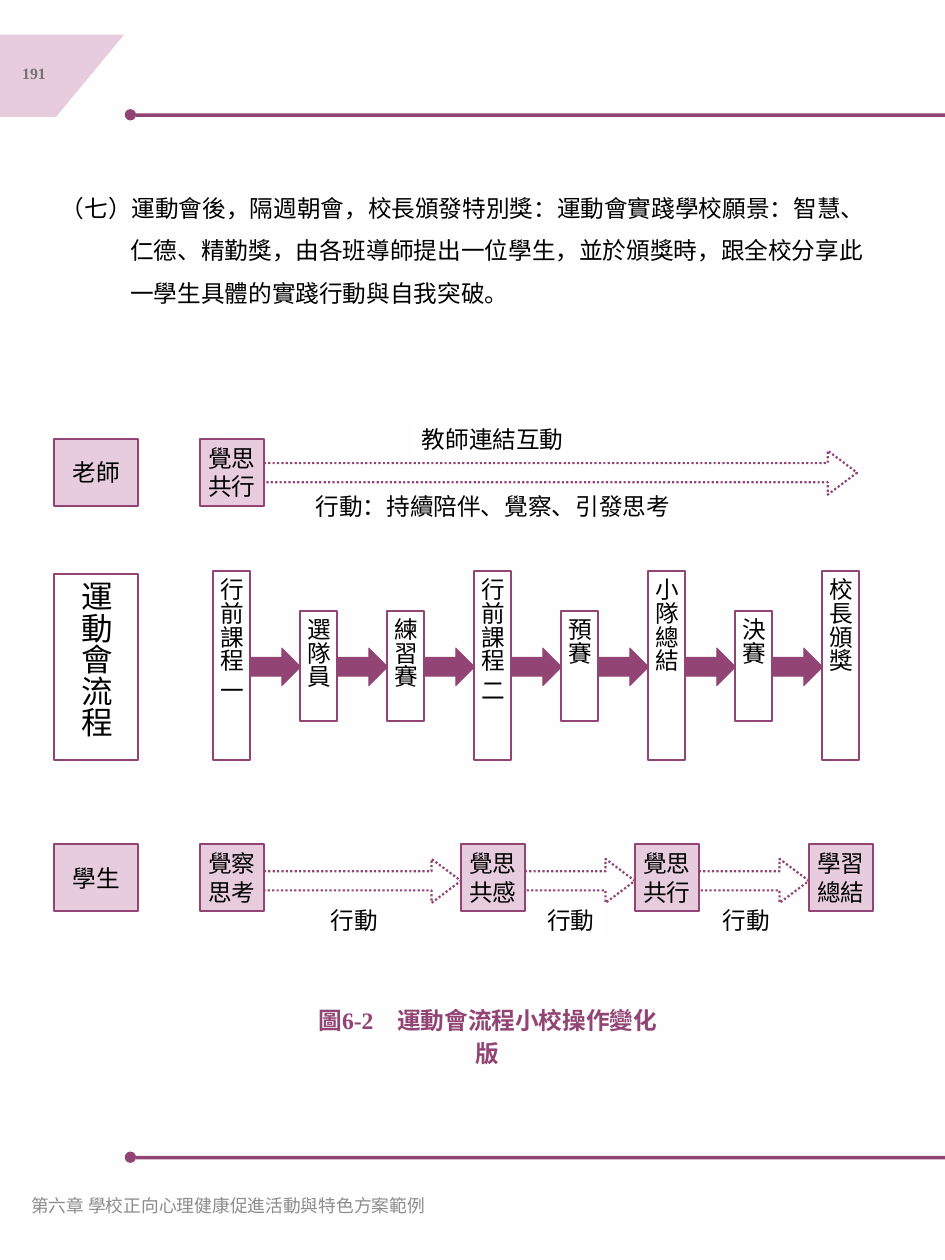
from pptx import Presentation
from pptx.dml.color import RGBColor
from pptx.enum.dml import MSO_LINE
from pptx.enum.shapes import MSO_SHAPE
from pptx.enum.text import MSO_ANCHOR, PP_ALIGN
from pptx.util import Inches, Pt

PLUM = RGBColor(0x92, 0x44, 0x74)
PINK = RGBColor(0xE7, 0xCC, 0xDD)
WHITE = RGBColor(0xFF, 0xFF, 0xFF)
PAPER = RGBColor(0xFE, 0xFE, 0xFE)
BLACK = RGBColor(0, 0, 0)
GREY = RGBColor(0x76, 0x71, 0x71)
LIGHT_GREY = RGBColor(0x8C, 0x8C, 0x8C)

SERIF = "Times New Roman"
SANS = "Noto Sans CJK SC"

RECTANGLE, OVAL, ARROW = MSO_SHAPE.RECTANGLE, MSO_SHAPE.OVAL, MSO_SHAPE.RIGHT_ARROW
TOP, MIDDLE = MSO_ANCHOR.TOP, MSO_ANCHOR.MIDDLE
LEFT, CENTER = PP_ALIGN.LEFT, PP_ALIGN.CENTER
DOTTED = MSO_LINE.ROUND_DOT

PAGE_WIDTH, PAGE_HEIGHT = 13.33, 17.78
STEPS = ["行前課程 一", "選隊員", "練習賽", "行前課程 二",
         "預賽", "小隊總結", "決賽", "校長頒獎"]
STAGES = {0: "覺察\n思考", 3: "覺思\n共感", 5: "覺思\n共行", 7: "學習\n總結"}
FIRST_CENTER, LAST_CENTER = 3.27, 11.86
STEP_GAP = (LAST_CENTER - FIRST_CENTER) / (len(STEPS) - 1)
STAGE_WIDTH = 0.9


def step_center(index):
    return FIRST_CENTER + index * STEP_GAP


def write(shape, text, size=24, font=SERIF, color=BLACK, bold=False,
          align=CENTER, anchor=MIDDLE, wrap=True, spacing=None):
    """Fill a shape with text, one paragraph for each line."""
    frame = shape.text_frame
    frame.word_wrap = wrap
    frame.vertical_anchor = anchor
    frame.text = text
    for para in frame.paragraphs:
        para.alignment = align
        para.line_spacing = spacing
        para.font.size = Pt(size)
        para.font.name = font
        para.font.bold = bold
        para.font.color.rgb = color
    return frame


def add_block(page, kind, box, fill, line=None, width=2.25):
    shape = page.shapes.add_shape(kind, *map(Inches, box))
    shape.shadow.inherit = False
    shape.fill.solid()
    shape.fill.fore_color.rgb = fill
    if line is None:
        shape.line.fill.background()
    else:
        shape.line.color.rgb = line
        shape.line.width = Pt(width)
    return shape


def add_text(page, box, text, **style):
    return write(page.shapes.add_textbox(*map(Inches, box)), text, **style)


def add_dotted_arrow(page, box):
    arrow = add_block(page, ARROW, box, WHITE, PLUM)
    arrow.adjustments[0], arrow.adjustments[1] = 0.433, 0.667
    arrow.line.dash_style = DOTTED


def add_vertical_box(page, box, text, size=24):
    frame = write(add_block(page, RECTANGLE, box, WHITE, PLUM), text, size)
    frame._txBody.bodyPr.set("vert", "eaVert")


def add_label(page, center, top, width, text):
    box = (center - width / 2, top, width, 0.5)
    write(add_block(page, RECTANGLE, box, WHITE), text,
          font=SANS, anchor=TOP, wrap=False)


def add_rule(page, left, middle):
    """Dot followed by a bar that runs to the right edge."""
    dot = 0.16
    bar_left = left + dot
    add_block(page, RECTANGLE,
              (bar_left, middle - 0.02, PAGE_WIDTH - bar_left, 0.05), PLUM)
    add_block(page, OVAL, (left, middle - dot / 2, dot, dot), PLUM)


def add_page_tab(page, box):
    left, top, width, height = box
    outline = page.shapes.build_freeform(Inches(left), Inches(top))
    outline.add_line_segments([
        (Inches(left + width), Inches(top)),
        (Inches(left + 0.79), Inches(top + height)),
        (Inches(left), Inches(top + height))], close=True)
    tab = outline.convert_to_shape()
    tab.shadow.inherit = False
    tab.fill.solid()
    tab.fill.fore_color.rgb = PINK
    tab.line.fill.background()
    add_text(page, (left + 0.09, top + 0.15, 0.78, 0.8), "191",
             size=16, color=GREY, bold=True)


def add_intro(page, box):
    frame = add_text(
        page, box,
        "（七）運動會後，隔週朝會，校長頒發特別獎：運動會實踐學校願景：智慧、"
        "仁德、精勤獎，由各班導師提出一位學生，並於頒獎時，跟全校分享此"
        "一學生具體的實踐行動與自我突破。",
        align=LEFT, anchor=TOP, spacing=1.5)
    properties = frame.paragraphs[0]._p.get_or_add_pPr()
    properties.set("marL", str(Inches(0.98)))
    properties.set("indent", str(-Inches(0.98)))


def add_pink_box(page, box, text):
    write(add_block(page, RECTANGLE, box, PINK, PLUM), text)


def add_teacher_row(page, box):
    left, top, width, height = box
    stage_left = FIRST_CENTER - STAGE_WIDTH / 2
    arrow_left = stage_left + STAGE_WIDTH
    add_dotted_arrow(page, (arrow_left, top + 0.17, left + width - arrow_left, 0.62))
    add_pink_box(page, (left, top, 1.19, height), "老師")
    add_pink_box(page, (stage_left, top, STAGE_WIDTH, height), "覺思共行")
    add_label(page, 6.95, top - 0.25, 2.22, "教師連結互動")
    add_label(page, 6.95, top + 0.7, 5.25, "行動：持續陪伴、覺察、引發思考")


def add_process_row(page, box):
    left, top, _, height = box
    step_width, middle = 0.52, top + height / 2
    add_vertical_box(page, (left, top + 0.04, 1.19, height - 0.04), "運動會流程", 32)
    for index, step in enumerate(STEPS):
        step_height = height if len(step) > 3 else 1.55
        step_left = step_center(index) - step_width / 2
        add_vertical_box(page, (step_left, middle - step_height / 2,
                                step_width, step_height), step)
    for index in range(len(STEPS) - 1):
        arrow_left = step_center(index) + step_width / 2
        add_block(page, ARROW, (arrow_left, middle - 0.25, 0.71, 0.53), PLUM, PLUM, 1)


def add_student_row(page, box):
    left, top, _, height = box
    centers = [step_center(index) for index in STAGES]
    for start, end in zip(centers, centers[1:]):
        add_dotted_arrow(page, (start + STAGE_WIDTH / 2, top + 0.21,
                                end - start - STAGE_WIDTH, 0.62))
    add_pink_box(page, (left, top, 1.19, height), "學生")
    for center, stage in zip(centers, STAGES.values()):
        add_pink_box(page, (center - STAGE_WIDTH / 2, top, STAGE_WIDTH, height), stage)
    for center in (5, 8.05, 10.53):
        add_label(page, center, top + 0.82, 0.88, "行動")


def main():
    deck = Presentation()
    deck.slide_width, deck.slide_height = Inches(PAGE_WIDTH), Inches(PAGE_HEIGHT)
    page = deck.slides.add_slide(deck.slide_layouts[6])
    page.background.fill.solid()
    page.background.fill.fore_color.rgb = PAPER

    # Page frame
    for middle in (1.62, 16.33):
        add_rule(page, 1.76, middle)
    add_page_tab(page, (0, 0.49, 1.75, 1.16))

    # Body text
    add_intro(page, (0.76, 2.48, 11.77, 1.85))

    # Flow diagram
    add_teacher_row(page, (0.76, 6.19, 11.33, 0.95))
    add_process_row(page, (0.76, 8.06, 11.36, 2.67))
    add_student_row(page, (0.76, 11.91, 11.54, 0.95))

    # Caption and footer
    add_text(page, (4.24, 14.09, 5.28, 0.53), "圖6-2　運動會流程小校操作變化版",
             color=PLUM, bold=True, anchor=TOP, spacing=1.15)
    add_text(page, (0.34, 16.61, 5.98, 0.8), "第六章 學校正向心理健康促進活動與特色方案範例",
             size=18, color=LIGHT_GREY, align=LEFT)

    deck.save("out.pptx")


if __name__ == "__main__":
    main()
